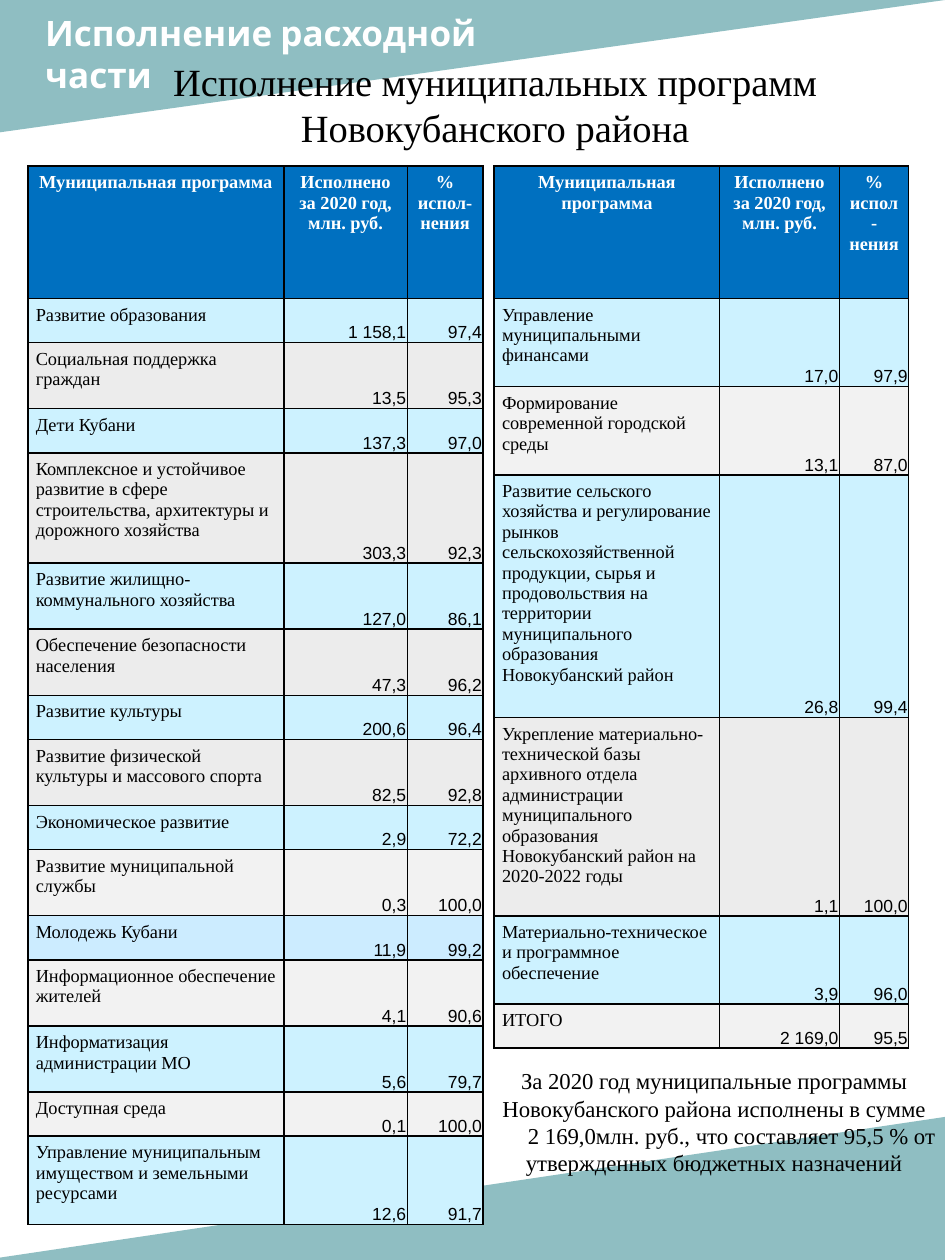
from lxml import etree
from pptx import Presentation
from pptx.dml.color import RGBColor
from pptx.enum import shapes, text
from pptx.oxml.ns import qn
from pptx.util import Pt

TEAL = RGBColor(0x51, 0x9A, 0xA0)
HEADER_BLUE = RGBColor(0x00, 0x70, 0xC0)
AQUA = RGBColor(0xCD, 0xF2, 0xFF)
SKY = RGBColor(0xCC, 0xEC, 0xFF)
GREY = RGBColor(0xEC, 0xEC, 0xEC)
PALE = RGBColor(0xF2, 0xF2, 0xF2)
WHITE = RGBColor(0xFF, 0xFF, 0xFF)
BLACK = RGBColor(0x00, 0x00, 0x00)
SERIF = "Times New Roman"
LINE_STEP = 12.6  # a row is one step per text line, plus one
HEADER_LINES = 5

HEADERS = ("Муниципальная программа", "Исполнено за 2020 год, млн. руб.", "% испол-нения")

# programme, spent, percent, text lines, fill
LEFT_ROWS = [
    ("Развитие образования", "1 158,1", "97,4", 1, AQUA),
    ("Социальная поддержка граждан", "13,5", "95,3", 2, GREY),
    ("Дети Кубани", "137,3", "97,0", 1, AQUA),
    ("Комплексное и устойчивое развитие в сфере строительства, архитектуры "
     "и дорожного хозяйства", "303,3", "92,3", 4, GREY),
    ("Развитие жилищно-коммунального хозяйства", "127,0", "86,1", 2, AQUA),
    ("Обеспечение безопасности населения", "47,3", "96,2", 2, GREY),
    ("Развитие культуры", "200,6", "96,4", 1, AQUA),
    ("Развитие физической культуры и массового спорта", "82,5", "92,8", 2, GREY),
    ("Экономическое развитие", "2,9", "72,2", 1, AQUA),
    ("Развитие муниципальной службы", "0,3", "100,0", 2, PALE),
    ("Молодежь Кубани", "11,9", "99,2", 1, SKY),
    ("Информационное обеспечение жителей", "4,1", "90,6", 2, PALE),
    ("Информатизация администрации МО", "5,6", "79,7", 2, AQUA),
    ("Доступная среда", "0,1", "100,0", 1, PALE),
    ("Управление муниципальным имуществом и земельными ресурсами",
     "12,6", "91,7", 3, AQUA),
]
RIGHT_ROWS = [
    ("Управление муниципальными финансами", "17,0", "97,9", 3, AQUA),
    ("Формирование современной городской среды", "13,1", "87,0", 3, PALE),
    ("Развитие сельского хозяйства и регулирование рынков сельскохозяйственной "
     "продукции, сырья и продовольствия на территории муниципального образования "
     "Новокубанский район", "26,8", "99,4", 10, AQUA),
    ("Укрепление материально-технической базы архивного отдела администрации "
     "муниципального образования Новокубанский район на 2020-2022 годы",
     "1,1", "100,0", 8, GREY),
    ("Материально-техническое и программное обеспечение", "3,9", "96,0", 3, AQUA),
    ("ИТОГО", "2 169,0", "95,5", 1, PALE),
]


def format_text(frame, size, font, color, bold=False, align=text.PP_ALIGN.LEFT):
    for paragraph in frame.paragraphs:
        paragraph.alignment = align
        for run in paragraph.runs:
            run.font.size = Pt(size)
            run.font.name = font
            run.font.bold = bold
            run.font.color.rgb = color


def add_corner(slide, box, flip):
    """Translucent right triangle, turned half round and flipped along one axis."""
    corner = slide.shapes.add_shape(
        shapes.MSO_SHAPE.RIGHT_TRIANGLE, *(Pt(length) for length in box))
    corner.shadow.inherit = False
    corner.rotation = 180
    corner._element.spPr.find(qn("a:xfrm")).set(flip, "1")
    corner.fill.solid()
    corner.fill.fore_color.rgb = TEAL
    color = corner._element.spPr.find(qn("a:solidFill"))[0]
    etree.SubElement(color, qn("a:alpha")).set("val", "64000")
    corner.line.fill.background()


def add_text(slide, box, content, *style, **options):
    frame = slide.shapes.add_textbox(*(Pt(length) for length in box)).text_frame
    frame.word_wrap = True
    frame.text = content
    format_text(frame, *style, **options)
    return frame


def add_borders(cell):
    properties = cell._tc.get_or_add_tcPr()
    for side in ("a:lnL", "a:lnR", "a:lnT", "a:lnB"):
        line = etree.SubElement(properties, qn(side), w=str(Pt(0.96)))
        fill = etree.SubElement(line, qn("a:solidFill"))
        etree.SubElement(fill, qn("a:srgbClr"), val=str(BLACK))


def fill_cell(cell, content, fill, is_header, is_number):
    add_borders(cell)
    cell.fill.solid()
    cell.fill.fore_color.rgb = fill
    cell.text = content
    if is_number:
        cell.vertical_anchor = text.MSO_ANCHOR.BOTTOM
        cell.margin_left = cell.margin_right = cell.margin_top = Pt(0.7)
        cell.margin_bottom = 0
        format_text(cell.text_frame, 10, "Arial", BLACK, align=text.PP_ALIGN.RIGHT)
        return
    cell.margin_left = cell.margin_right = Pt(4.5)
    cell.margin_top = cell.margin_bottom = Pt(3.6)
    if is_header:
        format_text(cell.text_frame, 10.5, SERIF, WHITE, True, text.PP_ALIGN.CENTER)
    else:
        format_text(cell.text_frame, 10.5, SERIF, BLACK)


def add_programme_table(slide, left, top, widths, programmes):
    rows = [(*HEADERS, HEADER_LINES, HEADER_BLUE), *programmes]
    heights = [LINE_STEP * (row[3] + 1) for row in rows]
    table = slide.shapes.add_table(
        len(rows), len(widths), Pt(left), Pt(top),
        Pt(sum(widths)), Pt(sum(heights))).table
    table.first_row = table.horz_banding = False
    for column, width in zip(table.columns, widths):
        column.width = Pt(width)
    for index, (*contents, _, fill) in enumerate(rows):
        table.rows[index].height = Pt(heights[index])
        for position, content in enumerate(contents):
            is_header = index == 0
            fill_cell(table.cell(index, position), content, fill,
                      is_header, not is_header and position > 0)


def add_summary(slide, box):
    frame = add_text(
        slide, box,
        "За 2020 год муниципальные программы Новокубанского района исполнены в сумме\n"
        "2 169,0млн. руб., что составляет 95,5 % от утвержденных бюджетных назначений",
        13, SERIF, BLACK, align=text.PP_ALIGN.CENTER)
    frame.paragraphs[1]._p.get_or_add_pPr().set("indent", str(Pt(20)))


def main():
    presentation = Presentation()
    presentation.slide_width, presentation.slide_height = Pt(540), Pt(720)
    slide = presentation.slides.add_slide(presentation.slide_layouts[6])
    add_corner(slide, (0, 0, 540, 75.6), "flipH")
    add_corner(slide, (-9.4, 638, 550.8, 82), "flipV")
    add_text(slide, (18.7, 2.9, 350.6, 55.4), "Исполнение расходной\nчасти",
             20, "Cabin", WHITE, bold=True)
    add_text(slide, (46, 29.5, 473.8, 59.8),
             "Исполнение муниципальных программ Новокубанского района",
             22, SERIF, BLACK, align=text.PP_ALIGN.CENTER)
    add_programme_table(slide, 16, 95, (146.2, 70.6, 43.2), LEFT_ROWS)
    add_programme_table(slide, 282.4, 95, (128.9, 68.4, 39.6), RIGHT_ROWS)
    add_summary(slide, (272.9, 606.2, 270, 69.8))
    presentation.save("out.pptx")


if __name__ == "__main__":
    main()
